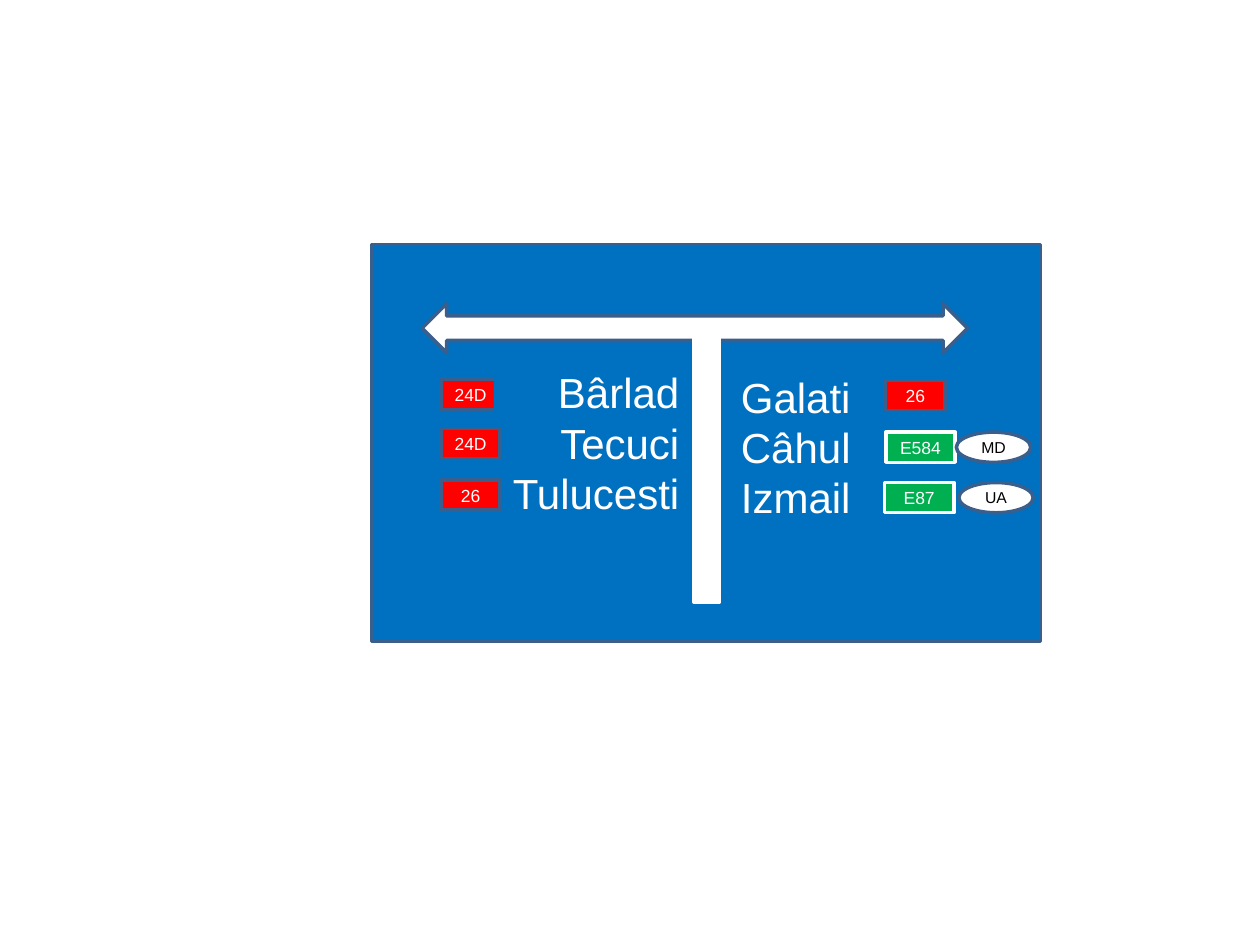
from pptx import Presentation
from pptx.dml.color import RGBColor
from pptx.enum.shapes import MSO_SHAPE
from pptx.enum.text import MSO_ANCHOR, PP_ALIGN
from pptx.util import Inches, Pt

BLUE, EDGE, WHITE, BLACK = "0070C0", "3A5F8C", "FFFFFF", "000000"
RED, GREEN = "FF0000", "00B050"


def rgb(value):
    """Return the colour for a hex string."""
    return RGBColor.from_string(value)


def add_box(s, kind, box, fill, line=None):
    """Add a filled preset shape, outlined when a line colour is given."""
    sp = s.shapes.add_shape(kind, *map(Inches, box))
    sp.shadow.inherit = False
    sp.fill.solid()
    sp.fill.fore_color.rgb = rgb(fill)
    if line:
        sp.line.color.rgb = rgb(line)
        sp.line.width = Pt(2)
    else:
        sp.line.fill.background()
    return sp


def set_text(sp, lines, size, color, align, insets):
    """Write one paragraph per line, centred vertically in the shape."""
    tf = sp.text_frame
    left, top, right, bottom = map(Inches, insets)
    frame = {"word_wrap": True, "vertical_anchor": MSO_ANCHOR.MIDDLE,
             "margin_left": left, "margin_top": top,
             "margin_right": right, "margin_bottom": bottom}
    for name, value in frame.items():
        setattr(tf, name, value)
    tf.text = "\n".join(lines)
    for p in tf.paragraphs:
        p.alignment = align
        for name, value in {"size": Pt(size), "name": "Arial"}.items():
            setattr(p.font, name, value)
        p.font.color.rgb = rgb(color)


def add_plate(s, text, left, top, width, fill, line):
    """Add a rectangular road number plate."""
    sp = add_box(s, MSO_SHAPE.RECTANGLE, (left, top, width, 0.24), fill, line)
    set_text(sp, [text], 10, WHITE, PP_ALIGN.CENTER, (0, 0, 0, 0))


def add_country(s, text, left, top):
    """Add an oval country code."""
    sp = add_box(s, MSO_SHAPE.OVAL, (left, top, 0.59, 0.24), WHITE, EDGE)
    set_text(sp, [text], 9, BLACK, PP_ALIGN.CENTER, (0, 0, 0, 0))


def add_towns(s, towns, box, align, insets):
    """Add a block of town names."""
    sp = add_box(s, MSO_SHAPE.RECTANGLE, box, BLUE)
    set_text(sp, towns, 24, WHITE, align, insets)


def main():
    """Build the direction sign."""
    prs = Presentation()
    prs.slide_width, prs.slide_height = Inches(10), Inches(7.5)
    s = prs.slides.add_slide(prs.slide_layouts[6])

    add_box(s, MSO_SHAPE.RECTANGLE, (2.95, 1.94, 5.31, 3.15), BLUE, EDGE)
    add_box(s, MSO_SHAPE.LEFT_RIGHT_ARROW, (3.35, 2.41, 4.33, 0.39), WHITE, EDGE)
    add_box(s, MSO_SHAPE.RECTANGLE, (5.51, 2.61, 0.2, 2.17), WHITE, WHITE)

    add_plate(s, "24D", 3.5, 3.01, 0.47, RED, EDGE)
    add_towns(s, ["Bârlad", "Tecuci", "Tulucesti"], (3.92, 2.8, 1.57, 1.42),
              PP_ALIGN.RIGHT, (0.1, 0.05, 0.1, 0.05))
    add_towns(s, ["Galati", "Câhul", "Izmail"], (5.88, 2.84, 1.09, 1.86),
              PP_ALIGN.LEFT, (0, 0.05, 0.1, 0.5))

    for text, top in (("24D", 3.4), ("26", 3.81)):
        add_plate(s, text, 3.5, top, 0.47, RED, EDGE)
    add_plate(s, "26", 7.03, 3.02, 0.47, RED, EDGE)
    for road, left, country, oval_left, top in (
            ("E584", 7.03, "MD", 7.59, 3.43), ("E87", 7.02, "UA", 7.61, 3.83)):
        add_plate(s, road, left, top, 0.55, GREEN, WHITE)
        add_country(s, country, oval_left, top)

    prs.save("out.pptx")


if __name__ == "__main__":
    main()
